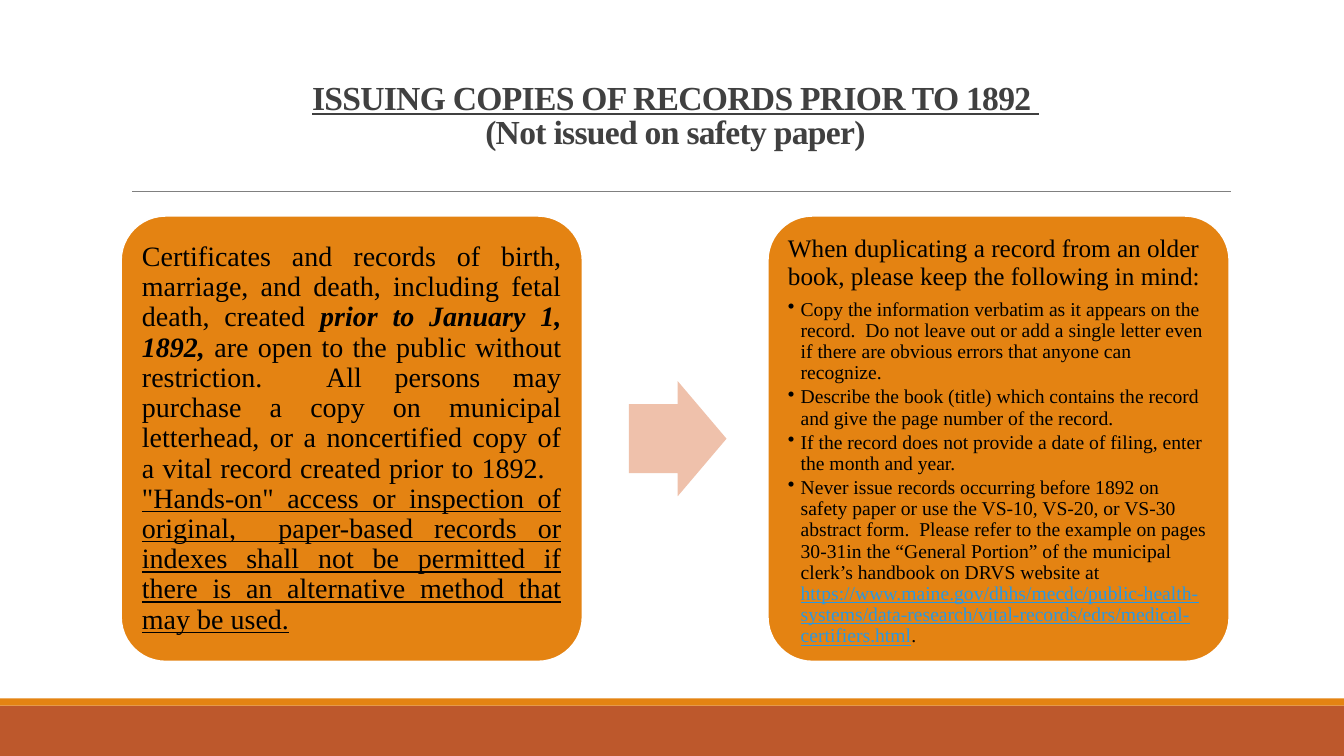
import pptx
import pptx.util
import pptx.oxml.ns
from lxml import etree
from pptx.dml.color import RGBColor
from pptx.enum.shapes import MSO_CONNECTOR, MSO_SHAPE
from pptx.enum.text import MSO_ANCHOR, PP_ALIGN
from pptx.util import Cm, Pt

ORANGE = RGBColor(0xE4, 0x83, 0x12)
RUST = RGBColor(0xBD, 0x58, 0x2C)
PEACH = RGBColor(0xEF, 0xC1, 0xAB)
WHITE = RGBColor(0xFF, 0xFF, 0xFF)
BLACK = RGBColor(0, 0, 0)
TITLE_GRAY = RGBColor(0x40, 0x40, 0x40)
RULE_GRAY = RGBColor(0x80, 0x80, 0x80)
LINK_BLUE = RGBColor(0x29, 0x98, 0xE3)
FONT = "Times New Roman"

# Each paragraph is a list of (text, run format) pairs.
TITLE = [
    ("ISSUING COPIES OF RECORDS PRIOR TO 1892 ", {"underline": True}),
    ("\v(Not issued on safety paper)", {}),
]
ACCESS = [
    ("Certificates and records of birth, marriage, and death, including fetal death, created ", {}),
    ("prior to January 1, 1892, ", {"bold": True, "italic": True}),
    ("are open to the public without restriction.  All persons may purchase a copy on "
     "municipal letterhead, or a noncertified copy of a vital record created prior to 1892.   ", {}),
    ('"Hands-on" access or inspection of original,  paper-based records or indexes shall not be '
     "permitted if there is an alternative method that may be used.", {"underline": True}),
]
DUPLICATING = [("When duplicating a record from an older book, please keep the following in mind:", {})]
RULES = [
    [("Copy the information verbatim as it appears on the record.  Do not leave out or add a "
      "single letter even if there are obvious errors that anyone can recognize.", {})],
    [("Describe the book (title) which contains the record and give the page number of the record.", {})],
    [("If the record does not provide a date of filing, enter the month and year.", {})],
    [("Never issue records occurring before 1892 on safety paper or use the VS-10, VS-20, or VS-30 "
      "abstract form.  Please refer to the example on pages 30-31in the “General Portion” of the "
      "municipal clerk’s handbook on DRVS website at  ", {}),
     ("https://www.maine.gov/dhhs/mecdc/public-health-systems/data-research/vital-records/edrs/"
      "medical-certifiers.html", {"color": LINK_BLUE, "underline": True}),
     (".", {})],
]

SLIDE_WIDTH, SLIDE_HEIGHT = Cm(33.87), Cm(19.05)
BAND_HEIGHT, STRIPE_HEIGHT = Cm(1.27), Cm(0.18)
RULE_LEFT, RULE_RIGHT, RULE_TOP = Cm(3.33), Cm(31.01), Cm(4.83)
CARD_LEFTS, CARD_TOP = (Cm(3.05), Cm(19.35)), Cm(5.44)
CARD_WIDTH, CARD_HEIGHT = Cm(11.63), Cm(11.23)
ARROW_LEFT, ARROW_WIDTH, ARROW_HEIGHT = Cm(15.85), Cm(2.46), Cm(2.9)
BULLET_INDENT = Cm(0.32)


def add_filled_shape(slide, preset, box, color, adjustments=()):
    shape = slide.shapes.add_shape(preset, *box)
    shape.shadow.inherit = False
    shape.fill.solid()
    shape.fill.fore_color.rgb = color
    shape.line.fill.background()
    for index, value in enumerate(adjustments):
        shape.adjustments[index] = value
    return shape


def set_frame(frame, anchor, inset):
    values = {"word_wrap": True, "vertical_anchor": anchor, "margin_left": inset,
              "margin_top": inset, "margin_right": inset, "margin_bottom": inset}
    for name, value in values.items():
        setattr(frame, name, value)


def write_paragraph(paragraph, runs, size, paragraph_format, color=BLACK, bold=False, bullet=False):
    if bullet:
        properties = paragraph._p.get_or_add_pPr()
        properties.set("marL", str(BULLET_INDENT))
        properties.set("indent", str(-BULLET_INDENT))
        etree.SubElement(properties, pptx.oxml.ns.qn("a:buChar")).set("char", "•")
    for name, value in paragraph_format.items():
        setattr(paragraph, name, value)
    for text, run_format in runs:
        if text.startswith("\v"):
            paragraph.add_line_break()
        run = paragraph.add_run()
        run.text = text.lstrip("\v")
        values = {"name": FONT, "size": Pt(size), "bold": bold, **run_format}
        run.font.color.rgb = values.pop("color", color)
        for name, value in values.items():
            setattr(run.font, name, value)


def add_title(slide):
    title = slide.shapes.add_textbox(Cm(3.05), Cm(0.79), Cm(27.94), Cm(4.04))
    set_frame(title.text_frame, MSO_ANCHOR.BOTTOM, Cm(0.25))
    title.text_frame.margin_bottom = Cm(1.02)
    paragraph = title.text_frame.paragraphs[0]
    write_paragraph(paragraph, TITLE, 24, {"alignment": PP_ALIGN.CENTER, "line_spacing": 0.85},
                    TITLE_GRAY, bold=True)
    for run in paragraph.runs:
        run.font._element.set("spc", "-50")


def add_rule(slide):
    rule = slide.shapes.add_connector(MSO_CONNECTOR.STRAIGHT, RULE_LEFT, RULE_TOP, RULE_RIGHT, RULE_TOP)
    rule.line.color.rgb = RULE_GRAY
    rule.line.width = Pt(0.5)
    etree.SubElement(rule._element.spPr, pptx.oxml.ns.qn("a:effectLst"))


def add_card(slide, left, anchor, inset):
    card = add_filled_shape(slide, MSO_SHAPE.ROUNDED_RECTANGLE,
                            (left, CARD_TOP, CARD_WIDTH, CARD_HEIGHT), ORANGE, [0.1])
    card.line.color.rgb = WHITE
    card.line.width = Pt(1.25)
    set_frame(card.text_frame, anchor, inset)
    return card.text_frame


def main():
    presentation = pptx.Presentation()
    presentation.slide_width, presentation.slide_height = SLIDE_WIDTH, SLIDE_HEIGHT
    slide = presentation.slides.add_slide(presentation.slide_layouts[6])

    band_top = SLIDE_HEIGHT - BAND_HEIGHT
    for top, height, color in ((band_top, BAND_HEIGHT, RUST),
                               (band_top - STRIPE_HEIGHT, STRIPE_HEIGHT, ORANGE)):
        add_filled_shape(slide, MSO_SHAPE.RECTANGLE, (0, top, SLIDE_WIDTH, height), color)
    add_rule(slide)
    add_title(slide)

    access = add_card(slide, CARD_LEFTS[0], MSO_ANCHOR.MIDDLE, Cm(0.2))
    write_paragraph(access.paragraphs[0], ACCESS, 20,
                    {"alignment": PP_ALIGN.JUSTIFY, "line_spacing": 0.9})

    arrow_top = CARD_TOP + (CARD_HEIGHT - ARROW_HEIGHT) // 2
    add_filled_shape(slide, MSO_SHAPE.RIGHT_ARROW,
                     (ARROW_LEFT, arrow_top, ARROW_WIDTH, ARROW_HEIGHT), PEACH, [0.6, 0.5])

    duplicating = add_card(slide, CARD_LEFTS[1], MSO_ANCHOR.TOP, Cm(0.18))
    left_aligned = {"alignment": PP_ALIGN.LEFT, "line_spacing": 0.9}
    write_paragraph(duplicating.paragraphs[0], DUPLICATING, 18, {**left_aligned, "space_after": Pt(6.3)})
    for rule in RULES:
        write_paragraph(duplicating.add_paragraph(), rule, 14,
                        {**left_aligned, "level": 1, "space_after": Pt(2.1)}, bullet=True)

    presentation.save("out.pptx")


if __name__ == "__main__":
    main()
